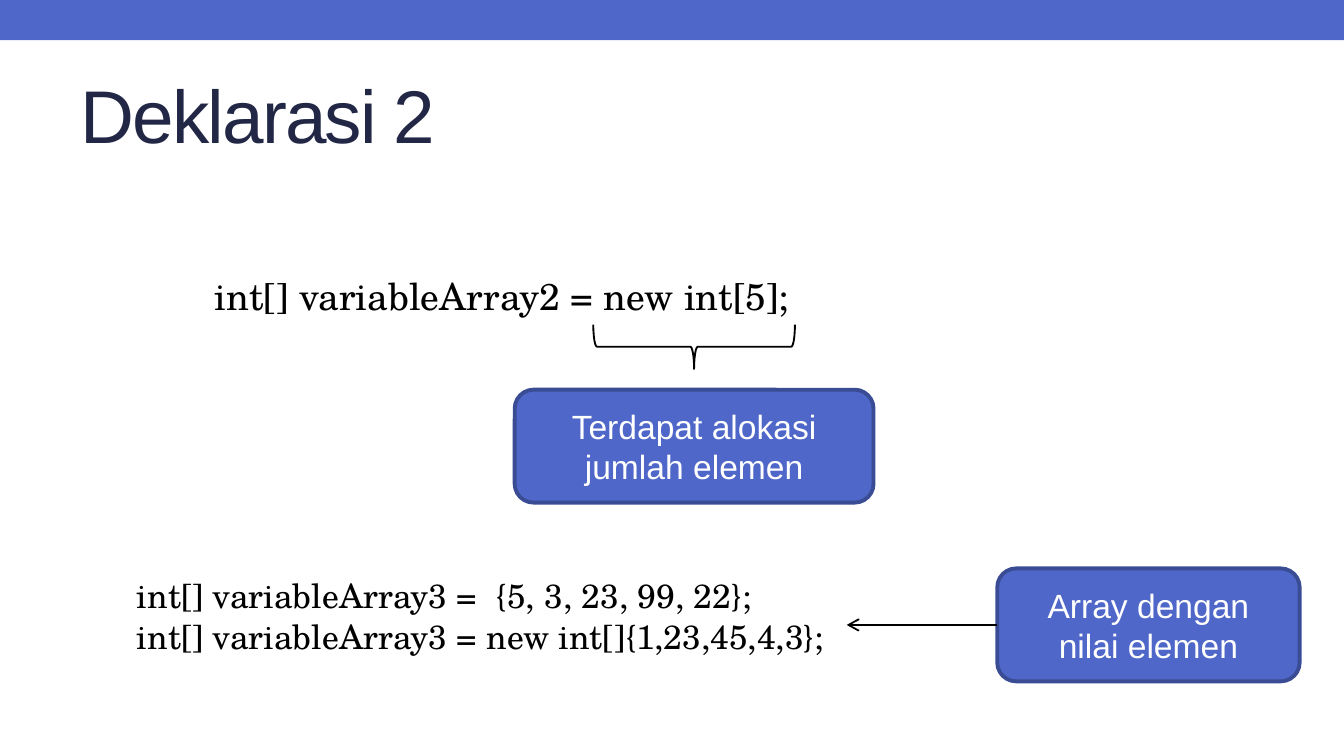
"""Builds the slide on array declarations with allocation and initial values."""
from lxml.etree import SubElement
from pptx import Presentation
from pptx.dml.color import RGBColor
from pptx.enum.shapes import MSO_CONNECTOR as Link, MSO_SHAPE as Kind
from pptx.enum.text import MSO_ANCHOR as Anchor, MSO_AUTO_SIZE as Auto, PP_ALIGN as Align
from pptx.oxml.ns import qn
from pptx.util import Inches, Pt

WIDE = 10
HIGH = WIDE * 9 / 16
HUES = {"blue": "4E67C8", "edge": "3A4C94", "navy": "212745", "ink": "000000", "white": "FFFFFF"}
TITLE = "Deklarasi 2"
CODES = [
    ((1.5, 1.98, 4.53, 0.44), 20, ["int[] variableArray2 = new int[5];"]),
    ((0.92, 4.23, 5.39, 0.71), 18, [
        "int[] variableArray3 =  {5, 3, 23, 99, 22};",
        "int[] variableArray3 = new int[]{1,23,45,4,3};",
    ]),
]
NOTES = [
    ((3.83, 2.9, 2.67, 0.84), "Terdapat alokasi jumlah elemen"),
    ((7.42, 4.23, 2.25, 0.84), "Array dengan nilai elemen"),
]
STYLES = {
    "title": {"name": "Arial", "size": Pt(40), "hue": "navy"},
    "code": {"name": "TeX Gyre Schola", "hue": "ink"},
    "note": {"name": "Arial", "size": Pt(18), "hue": "white"},
}


def tint(hue):
    return RGBColor.from_string(HUES[hue])


def place(box):
    return [Inches(n) for n in box]


def write(frame, lines, style, align=Align.LEFT, **more):
    frame.text = "\n".join(lines)
    for para in frame.paragraphs:
        para.alignment = align
        font = para.runs[0].font
        for key, val in {**STYLES[style], **more}.items():
            if key == "hue":
                font.color.rgb = tint(val)
            else:
                setattr(font, key, val)


def stroke(line, hue, width):
    line.color.rgb = tint(hue)
    line.width = Pt(width)


def draw(shapes, kind, box, fill=None, edge=None, width=1):
    shape = shapes.add_shape(kind, *place(box))
    shape.shadow.inherit = False
    if fill:
        shape.fill.solid()
        shape.fill.fore_color.rgb = tint(fill)
    else:
        shape.fill.background()
    if edge:
        stroke(shape.line, edge, width)
    else:
        shape.line.fill.background()
    return shape


def main():
    deck = Presentation()
    deck.slide_width, deck.slide_height = place((WIDE, HIGH))
    slide = deck.slides.add_slide(deck.slide_layouts[5])
    shapes = slide.shapes
    draw(shapes, Kind.RECTANGLE, (0, 0, WIDE, 0.3), "blue")

    title = shapes.title
    title.left, title.top, title.width, title.height = place((0.5, 0.44, 9, 0.81))
    write(title.text_frame, [TITLE], "title")
    title.text_frame.vertical_anchor = Anchor.MIDDLE
    title.text_frame.paragraphs[0].runs[0].font._element.set("spc", "-100")

    for box, size, lines in CODES:
        frame = shapes.add_textbox(*place(box)).text_frame
        frame.word_wrap = False
        frame.auto_size = Auto.SHAPE_TO_FIT_TEXT
        write(frame, lines, "code", size=Pt(size))

    brace = draw(shapes, Kind.LEFT_BRACE, (5, 1.83, 0.33, 1.5), edge="ink")
    brace.rotation = 270

    for box, text in NOTES:
        note = draw(shapes, Kind.ROUNDED_RECTANGLE, box, "blue", "edge", 2.08)
        note.text_frame.word_wrap = True
        note.text_frame.vertical_anchor = Anchor.MIDDLE
        write(note.text_frame, [text], "note", Align.CENTER)

    arrow = shapes.add_connector(Link.STRAIGHT, *place((7.42, 4.65, 6.3, 4.65)))
    arrow.begin_connect(note, 1)
    stroke(arrow.line, "ink", 1)
    SubElement(arrow.line._get_or_add_ln(), qn("a:tailEnd"), type="arrow")
    SubElement(arrow._element.spPr, qn("a:effectLst"))

    deck.save("out.pptx")


if __name__ == "__main__":
    main()
